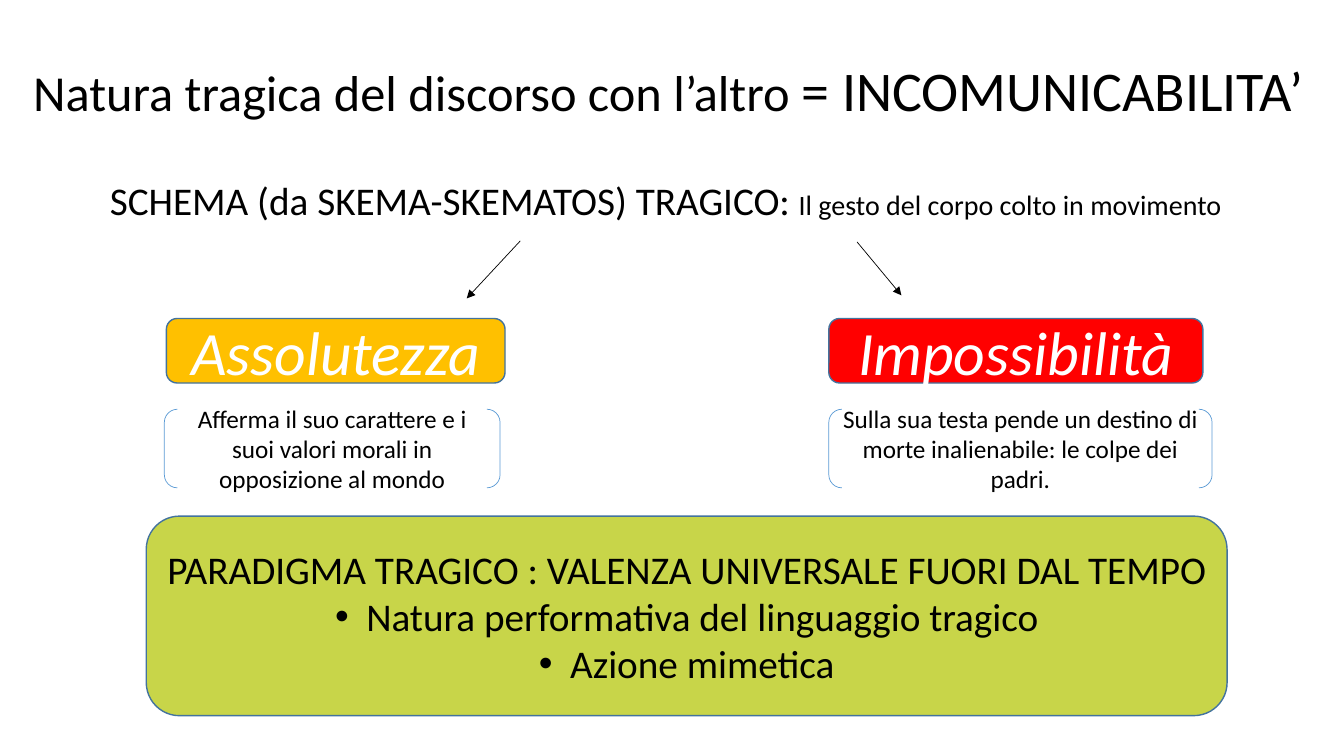
from lxml import etree
from pptx import Presentation, util as u
from pptx.dml.color import RGBColor
from pptx.enum import shapes, text
from pptx.oxml.ns import qn

WIDTH, HEIGHT = 13.33, 7.5
FONT = "Calibri"
BLACK, WHITE, EDGE, BRACKET = "000000", "FFFFFF", "43739E", "5B9BD5"

# Positions are percentages of the slide's width and height.
HEADINGS = [
    ((1.73, 0, 98.27, 24.67), text.MSO_ANCHOR.MIDDLE,
     [("Natura tragica del discorso con l’altro ", 36),
      ("= INCOMUNICABILITA’", 40)]),
    ((7.43, 23.33, 89.65, 8), text.MSO_ANCHOR.TOP,
     [("SCHEMA (da SKEMA-SKEMATOS) TRAGICO: ", 28),
      ("Il gesto del corpo colto in movimento", 20)]),
]
ARROWS = [(38.71, 31.87, 34.73, 39.47), (63.77, 32, 67.07, 39.07)]
TERM_TOP, TERM_HEIGHT = 42.13, 8.53
TERMS = [
    ("Assolutezza", 12.38, 25.2, "FFC000"),
    ("Impossibilità", 61.67, 27.83, "FF0000"),
]
NOTE_TOP, NOTE_HEIGHT = 54.13, 10.4
NOTES = [
    ("Afferma il suo carattere e i suoi valori morali in opposizione al mondo",
     12.23, 24.98),
    ("Sulla sua testa pende un destino di morte inalienabile: le colpe dei padri.",
     61.67, 28.52),
]
PARADIGM_AREA, PARADIGM_FILL = (10.88, 68.27, 80.42, 26.4), "C8D549"
PARADIGM = ["PARADIGMA TRAGICO : VALENZA UNIVERSALE FUORI DAL TEMPO",
            "Natura performativa del linguaggio tragico",
            "Azione mimetica"]


def color(value):
    return RGBColor.from_string(value)


def place(area):
    return [u.Inches(share / 100 * size)
            for share, size in zip(area, (WIDTH, HEIGHT) * 2)]


def style(font, size, ink):
    font.name, font.size = FONT, u.Pt(size)
    font.color.rgb = color(ink)


def add_heading(page, area, anchor, spans):
    frame = page.shapes.add_textbox(*place(area)).text_frame
    frame.word_wrap = True
    frame.vertical_anchor = anchor
    para = frame.paragraphs[0]
    para.line_spacing = 0.9
    for words, size in spans:
        span = para.add_run()
        span.text = words
        style(span.font, size, BLACK)


def add_arrow(page, ends):
    arrow = page.shapes.add_connector(shapes.MSO_CONNECTOR.STRAIGHT, *place(ends))
    arrow.line.color.rgb = color(BLACK)
    arrow.line.width = u.Pt(0.5)
    etree.SubElement(arrow.line._get_or_add_ln(), qn("a:tailEnd"), type="triangle")
    etree.SubElement(arrow._element.spPr, qn("a:effectLst"))


def add_box(page, kind, area, lines, size, ink, fill, edge, weight):
    box = page.shapes.add_shape(kind, *place(area))
    box.shadow.inherit = False
    if fill:
        box.fill.solid()
        box.fill.fore_color.rgb = color(fill)
    else:
        box.fill.background()
    box.line.color.rgb = color(edge)
    box.line.width = u.Pt(weight)
    frame = box.text_frame
    frame.word_wrap = True
    frame.vertical_anchor = text.MSO_ANCHOR.MIDDLE
    frame.text = "\n".join(lines)
    for para in frame.paragraphs:
        para.alignment = text.PP_ALIGN.CENTER
        style(para.font, size, ink)
    return frame.paragraphs


def add_bullet(para):
    props = para._p.get_or_add_pPr()
    indent = u.Inches(0.31)
    props.set("marL", str(indent))
    props.set("indent", str(-indent))
    bullet = etree.Element(qn("a:buChar"), char="•")
    font = etree.Element(qn("a:buFont"), typeface="Arial")
    props.insert(0, bullet)
    props.insert(0, font)


def main():
    deck = Presentation()
    deck.slide_width, deck.slide_height = u.Inches(WIDTH), u.Inches(HEIGHT)
    page = deck.slides.add_slide(deck.slide_layouts[6])
    rounded = shapes.MSO_SHAPE.ROUNDED_RECTANGLE
    for heading in HEADINGS:
        add_heading(page, *heading)
    for ends in ARROWS:
        add_arrow(page, ends)
    for term, left, width, fill in TERMS:
        area = (left, TERM_TOP, width, TERM_HEIGHT)
        para, = add_box(page, rounded, area, [term], 44, WHITE, fill, EDGE, 1)
        para.font.italic = True
    paras = add_box(page, rounded, PARADIGM_AREA, PARADIGM, 28, BLACK,
                    PARADIGM_FILL, EDGE, 1)
    for para in paras[1:]:
        add_bullet(para)
    for note, left, width in NOTES:
        area = (left, NOTE_TOP, width, NOTE_HEIGHT)
        add_box(page, shapes.MSO_SHAPE.DOUBLE_BRACKET, area, [note], 18, BLACK,
                None, BRACKET, 0.5)
    deck.save("out.pptx")


if __name__ == "__main__":
    main()
